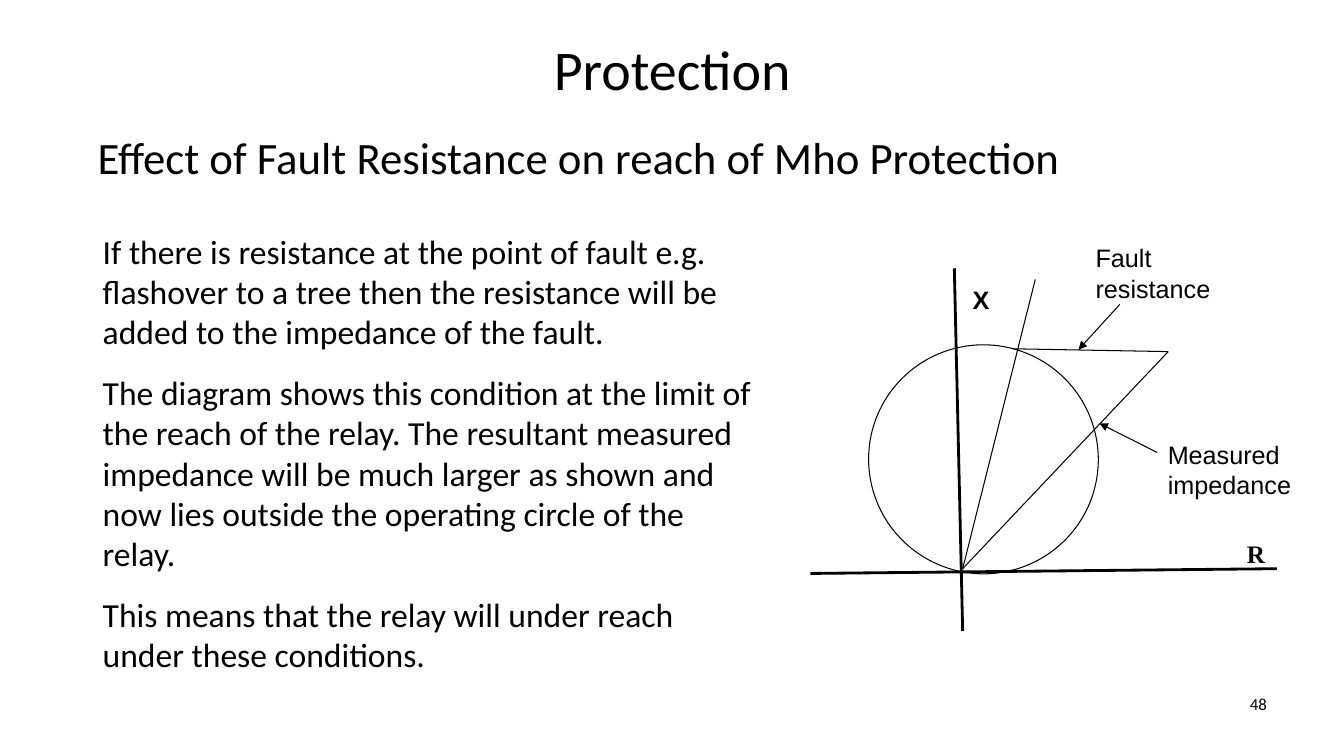
"""Build the slide on how fault resistance affects the reach of Mho protection."""
from dataclasses import dataclass

from lxml.etree import SubElement
from pptx import Presentation
from pptx.dml.color import RGBColor
from pptx.enum.shapes import MSO_CONNECTOR, MSO_SHAPE
from pptx.enum.text import MSO_ANCHOR, PP_ALIGN
from pptx.oxml.ns import qn
from pptx.slide import Slide
from pptx.util import Cm, Pt

INK = "000000"
HAIRLINE = 0
THIN = 0.75
Point = tuple[float, float]


@dataclass(frozen=True)
class Caption:
    paragraphs: tuple[str, ...]
    left: float
    top: float
    width: float
    height: float
    size: int
    font: str = "Calibri"
    bold: bool = False
    align: PP_ALIGN = PP_ALIGN.LEFT
    anchor: MSO_ANCHOR = MSO_ANCHOR.TOP
    before: float = 0
    after: float = 0


@dataclass(frozen=True)
class Stroke:
    start: Point
    end: Point
    weight: float = THIN
    arrow: bool = False


ORIGIN = (24.26, 14.33)
FAULT_END = (29.44, 8.86)

CAPTIONS = (
    Caption(("Protection",), 1.7, 0.3, 30.48, 2.84, 40,
            align=PP_ALIGN.CENTER, anchor=MSO_ANCHOR.MIDDLE),
    Caption(("Effect of Fault Resistance on reach of Mho Protection",),
            2.21, 3.15, 26.11, 2.01, 32),
    Caption((
        "If there is resistance at the point of fault e.g. flashover to a tree "
        "then the resistance will be added to the impedance of the fault.",
        "The diagram shows this condition at the limit of the reach of the relay. "
        "The resultant measured impedance will be much larger as shown and now lies "
        "outside the operating circle of the relay.",
        "This means that the relay will under reach under these conditions.",
    ), 2.34, 5.69, 17.04, 11.58, 24, before=2.5, after=12),
    Caption(("X",), 24.26, 7.04, 1.27, 1.02, 18, "Arial", bold=True),
    Caption(("R",), 31.09, 13.44, 1.04, 1.02, 18, "Times New Roman", bold=True,
            align=PP_ALIGN.RIGHT),
    Caption(("Fault resistance",), 27.36, 5.99, 4.65, 1.8, 18, "Arial"),
    Caption(("Measured impedance",), 29.18, 10.95, 3.94, 1.8, 18, "Arial"),
    Caption(("48",), 24.28, 17.35, 7.9, 1.32, 12, align=PP_ALIGN.RIGHT),
)

STROKES = (
    Stroke((24.05, 6.76), (24.26, 15.9), HAIRLINE),
    Stroke((20.42, 14.45), (32.18, 14.33), HAIRLINE),
    Stroke(ORIGIN, (26.09, 7.04)),
    Stroke((25.53, 8.79), FAULT_END),
    Stroke(ORIGIN, FAULT_END),
    Stroke((28.22, 7.67), (27.18, 8.81), arrow=True),
    Stroke((29.16, 11.4), (27.71, 10.67), arrow=True),
)


def color(value: str) -> RGBColor:
    return RGBColor.from_string(value)


def draw_caption(slide: Slide, caption: Caption) -> None:
    box = slide.shapes.add_textbox(Cm(caption.left), Cm(caption.top),
                                   Cm(caption.width), Cm(caption.height))
    frame = box.text_frame
    frame.word_wrap = True
    frame.vertical_anchor = caption.anchor
    for index, wording in enumerate(caption.paragraphs):
        paragraph = frame.add_paragraph() if index else frame.paragraphs[0]
        paragraph.text = wording
        paragraph.alignment = caption.align
        paragraph.space_before = Pt(caption.before if index else 0)
        paragraph.space_after = Pt(caption.after)
        paragraph.font.name = caption.font
        paragraph.font.size = Pt(caption.size)
        paragraph.font.bold = caption.bold
        paragraph.font.color.rgb = color(INK)


def draw_stroke(slide: Slide, stroke: Stroke) -> None:
    connector = slide.shapes.add_connector(
        MSO_CONNECTOR.STRAIGHT,
        *(Cm(length) for length in (*stroke.start, *stroke.end)))
    connector.line.color.rgb = color(INK)
    connector.line.width = Pt(stroke.weight)
    if stroke.arrow:
        SubElement(connector.line._get_or_add_ln(), qn("a:tailEnd"), type="triangle")
    SubElement(connector._element.spPr, qn("a:effectLst"))


def draw_operating_circle(slide: Slide) -> None:
    circle = slide.shapes.add_shape(MSO_SHAPE.OVAL, Cm(21.89), Cm(8.69),
                                    Cm(5.79), Cm(5.77))
    circle.rotation = 14.8
    circle.shadow.inherit = False
    circle.fill.background()
    circle.line.color.rgb = color(INK)
    circle.line.width = Pt(HAIRLINE)


def main() -> None:
    deck = Presentation()
    deck.slide_width, deck.slide_height = Cm(33.87), Cm(19.05)
    slide = deck.slides.add_slide(deck.slide_layouts[6])
    draw_operating_circle(slide)
    for stroke in STROKES:
        draw_stroke(slide, stroke)
    for caption in CAPTIONS:
        draw_caption(slide, caption)
    deck.save("out.pptx")


if __name__ == "__main__":
    main()
